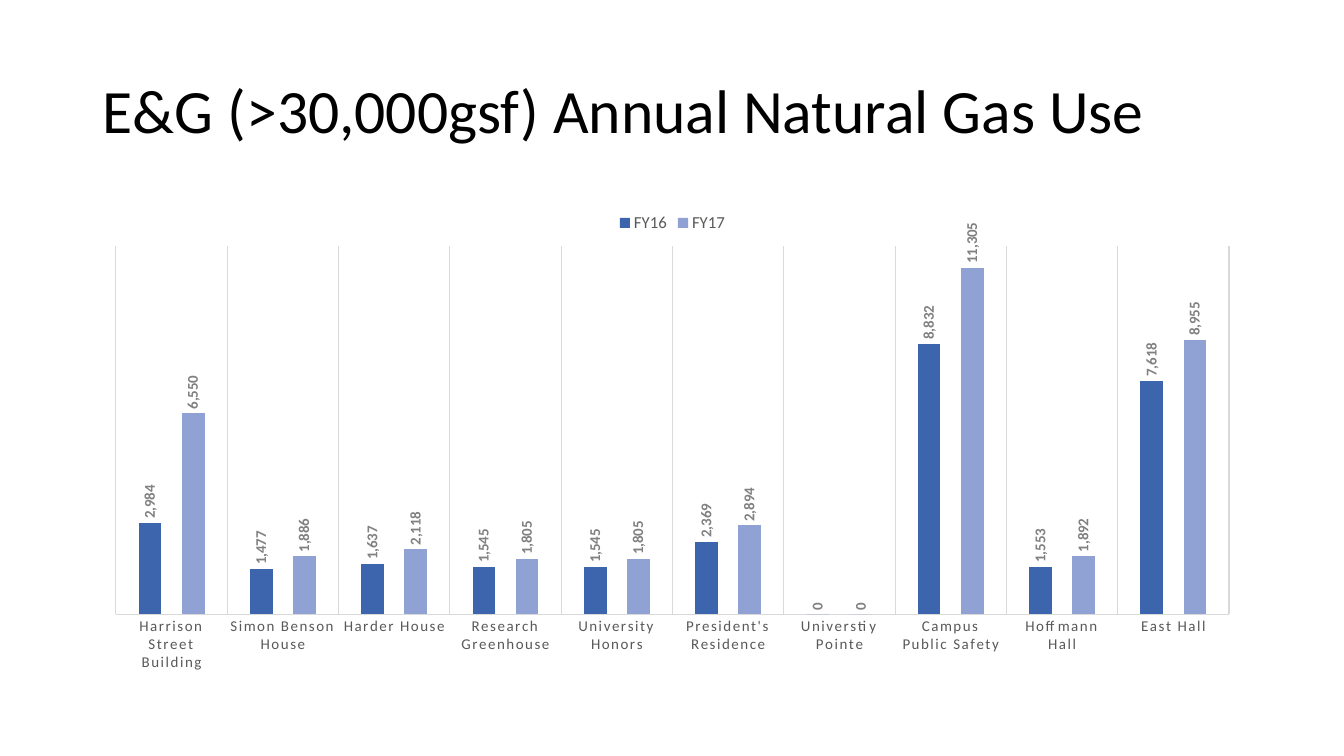
import pptx
import pptx.chart.data
import pptx.dml.color
import pptx.enum.chart
import pptx.enum.text
import pptx.oxml.ns
import pptx.util
from pptx.util import Inches

RGBColor = pptx.dml.color.RGBColor
BLACK = RGBColor(0x00, 0x00, 0x00)
TEXT_GREY = RGBColor(0x59, 0x59, 0x59)
LABEL_GREY = RGBColor(0x80, 0x80, 0x80)
LINE_GREY = RGBColor(0xD9, 0xD9, 0xD9)
DARK_BLUE = RGBColor(0x3C, 0x65, 0xAE)
LIGHT_BLUE = RGBColor(0x90, 0xA2, 0xD3)

BUILDINGS = [
    "Harrison Street Building", "Simon Benson House", "Harder House",
    "Research Greenhouse", "University Honors", "President's Residence",
    "Universtiy Pointe", "Campus Public Safety", "Hoffmann Hall", "East Hall",
]
GAS_USE = [
    ("FY16", DARK_BLUE, [2984, 1477, 1637, 1545, 1545, 2369, 0, 8832, 1553, 7618]),
    ("FY17", LIGHT_BLUE, [6550, 1886, 2118, 1805, 1805, 2894, 0, 11305, 1892, 8955]),
]


class SlideBuilder:
    """Holds the style and the current slide."""

    font_name = "Calibri"
    number_format = "#,##0"
    small_size = 10.64

    def __init__(self, presentation):
        self.slide = presentation.slides.add_slide(presentation.slide_layouts[5])

    def style_font(self, font, size, color, bold=False):
        font.name = self.font_name
        font.size = pptx.util.Pt(size)
        font.color.rgb = color
        font.bold = bold

    def style_line(self, line):
        line.color.rgb = LINE_GREY
        line.width = pptx.util.Pt(0.75)

    def add_title(self, text, left, top, width, height):
        title = self.slide.shapes.title
        title.left, title.top = Inches(left), Inches(top)
        title.width, title.height = Inches(width), Inches(height)
        frame = title.text_frame
        frame.text = text
        frame.word_wrap = True
        frame.vertical_anchor = pptx.enum.text.MSO_ANCHOR.MIDDLE
        paragraph = frame.paragraphs[0]
        paragraph.alignment = pptx.enum.text.PP_ALIGN.LEFT
        paragraph.line_spacing = 0.9
        self.style_font(paragraph.runs[0].font, 44, BLACK)

    def add_column_chart(self, categories, series_rows, left, top, width, height):
        data = pptx.chart.data.CategoryChartData(number_format=self.number_format)
        data.categories = categories
        for name, _, values in series_rows:
            data.add_series(name, values)
        chart = self.slide.shapes.add_chart(
            pptx.enum.chart.XL_CHART_TYPE.COLUMN_CLUSTERED,
            Inches(left), Inches(top), Inches(width), Inches(height), data).chart
        self.style_font(chart.font, 10, BLACK)
        chart.has_title = False

        # Legend
        chart.has_legend = True
        chart.legend.position = pptx.enum.chart.XL_LEGEND_POSITION.TOP
        chart.legend.include_in_layout = False
        self.style_font(chart.legend.font, 12, TEXT_GREY)

        # Columns and their upright labels
        plot = chart.plots[0]
        plot.gap_width = 200
        plot.overlap = -90
        plot.vary_by_categories = False
        for series, (_, color, _) in zip(plot.series, series_rows):
            series.format.fill.solid()
            series.format.fill.fore_color.rgb = color
            self.label_series(series)

        self.style_axes(chart)

    def label_series(self, series):
        labels = series.data_labels
        labels.show_value = True
        labels.number_format = self.number_format
        labels.number_format_is_linked = False
        labels.position = pptx.enum.chart.XL_LABEL_POSITION.OUTSIDE_END
        self.style_font(labels.font, self.small_size, LABEL_GREY, bold=True)
        body = labels._element.find(".//" + pptx.oxml.ns.qn("a:bodyPr"))
        body.set("rot", "-5400000")
        body.set("vert", "horz")

    def style_axes(self, chart):
        no_tick = pptx.enum.chart.XL_TICK_MARK.NONE
        category_axis = chart.category_axis
        category_axis.major_tick_mark = no_tick
        category_axis.minor_tick_mark = no_tick
        category_axis.has_major_gridlines = True
        self.style_line(category_axis.major_gridlines.format.line)
        self.style_line(category_axis.format.line)

        # Widely spaced building names
        font = category_axis.tick_labels.font
        self.style_font(font, self.small_size, TEXT_GREY)
        font._element.set("kern", "1200")
        font._element.set("spc", "120")

        value_axis = chart.value_axis
        value_axis.minimum_scale = 0
        value_axis.maximum_scale = 12000
        value_axis.has_major_gridlines = False
        value_axis.tick_labels.number_format = self.number_format
        value_axis.tick_labels.number_format_is_linked = False
        value_axis.visible = False


def main():
    presentation = pptx.Presentation()
    presentation.slide_width = Inches(13.33)
    presentation.slide_height = Inches(7.5)
    builder = SlideBuilder(presentation)
    builder.add_title("E&G (>30,000gsf) Annual Natural Gas Use", 0.92, 0.4, 11.5, 1.45)
    builder.add_column_chart(BUILDINGS, GAS_USE, 0.92, 2, 11.5, 4.76)
    presentation.save("out.pptx")


if __name__ == "__main__":
    main()
